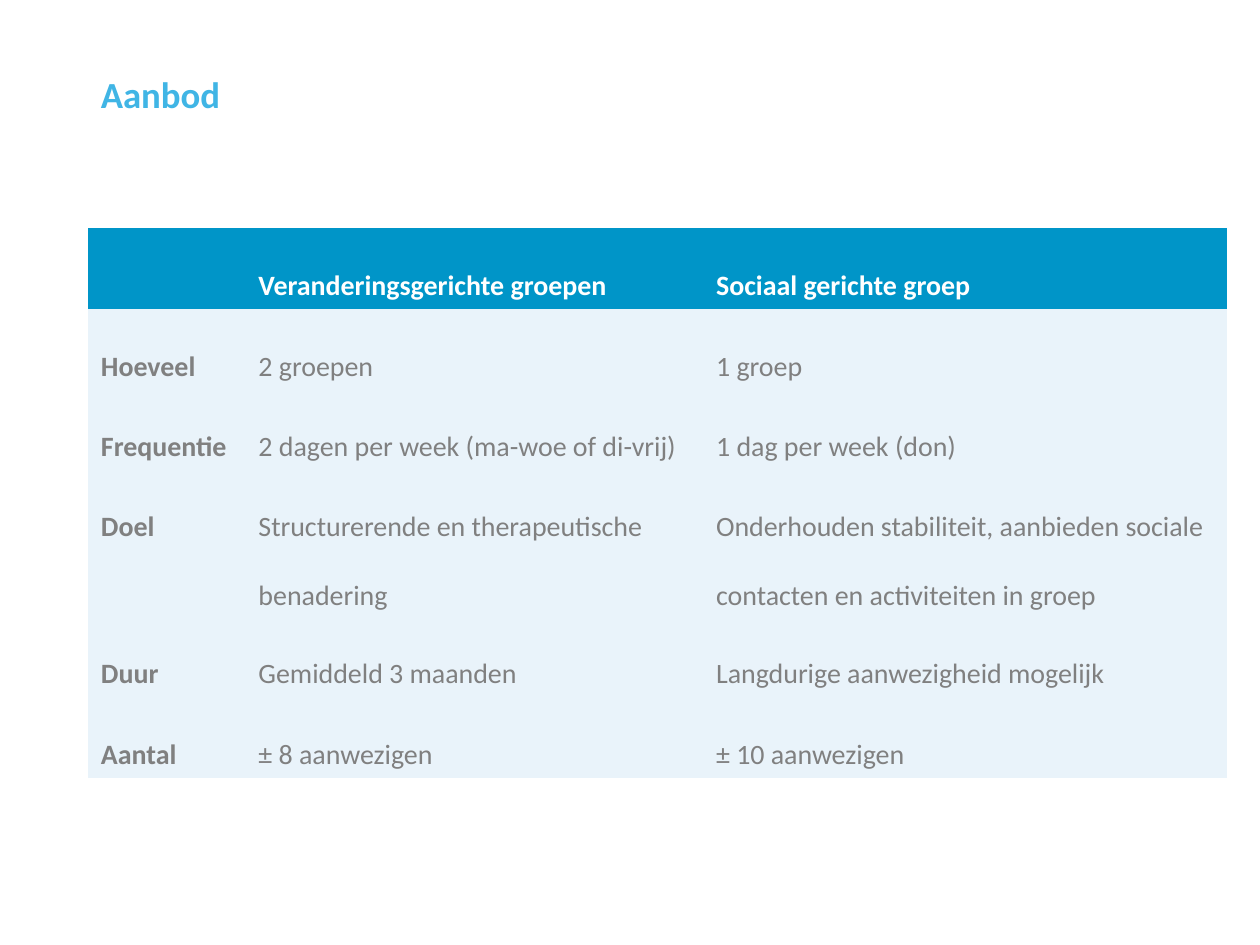
from pptx import Presentation
from pptx.dml.color import RGBColor
from pptx.enum.text import MSO_ANCHOR
from pptx.oxml.ns import qn
from pptx.util import Pt

COLORS = {
    "title": "40B5E5",
    "header": "0095C8",
    "body": "E9F3FA",
    "white": "FFFFFF",
    "gray": "808080",
}
NO_STYLE_NO_GRID = "{2D5ABB26-0587-4C30-8999-92F81FD0307C}"
COLUMN_WIDTHS = [90, 261.5, 299]
ROW_HEIGHT = 46
ROWS = [
    ["", "Veranderingsgerichte groepen", "Sociaal gerichte groep"],
    ["Hoeveel", "2 groepen", "1 groep"],
    ["Frequentie", "2 dagen per week (ma-woe of di-vrij)", "1 dag per week (don)"],
    ["Doel", "Structurerende en therapeutische benadering",
     "Onderhouden stabiliteit, aanbieden sociale contacten en activiteiten in groep"],
    ["Duur", "Gemiddeld 3 maanden", "Langdurige aanwezigheid mogelijk"],
    ["Aantal", "± 8 aanwezigen", "± 10 aanwezigen"],
]


class SlideBuilder:
    font_name = "Calibri"

    def __init__(self, slide):
        self.slide = slide

    def set_text(self, text_frame, text, color, line_spacing, **font_format):
        paragraph = text_frame.paragraphs[0]
        paragraph.text = text
        paragraph.line_spacing = line_spacing
        for name, value in {"name": self.font_name, **font_format}.items():
            setattr(paragraph.font, name, value)
        paragraph.font.color.rgb = RGBColor.from_string(COLORS[color])

    def add_title(self, text, left, top, width, height):
        shape = self.slide.shapes.add_textbox(Pt(left), Pt(top), Pt(width), Pt(height))
        text_frame = shape.text_frame
        text_frame.word_wrap = True
        text_frame.vertical_anchor = MSO_ANCHOR.TOP
        self.set_text(text_frame, text, "title", 0.9, size=Pt(21), bold=True)

    def add_table(self, rows, column_widths, row_height, left, top):
        shape = self.slide.shapes.add_table(
            len(rows), len(column_widths), Pt(left), Pt(top),
            Pt(sum(column_widths)), Pt(row_height * len(rows)))
        table = shape.table
        next(shape.element.iter(qn("a:tableStyleId"))).text = NO_STYLE_NO_GRID
        table.horz_banding = False
        for column, width in zip(table.columns, column_widths):
            column.width = Pt(width)
        for row_index, row in enumerate(rows):
            is_header = row_index == 0
            for column_index, text in enumerate(row):
                cell = table.cell(row_index, column_index)
                cell.fill.solid()
                fill = COLORS["header" if is_header else "body"]
                cell.fill.fore_color.rgb = RGBColor.from_string(fill)
                if text:
                    self.set_text(cell.text_frame, text, "white" if is_header else "gray", 2.0,
                                  size=Pt(16), bold=is_header or column_index == 0)


def main():
    presentation = Presentation()
    presentation.slide_width = Pt(720)
    presentation.slide_height = Pt(540)
    builder = SlideBuilder(presentation.slides.add_slide(presentation.slide_layouts[6]))
    builder.add_title("Aanbod", 50.5, 40.5, 602.5, 65.5)
    builder.add_table(ROWS, COLUMN_WIDTHS, ROW_HEIGHT, 50.5, 130.5)
    presentation.save("out.pptx")


if __name__ == "__main__":
    main()
